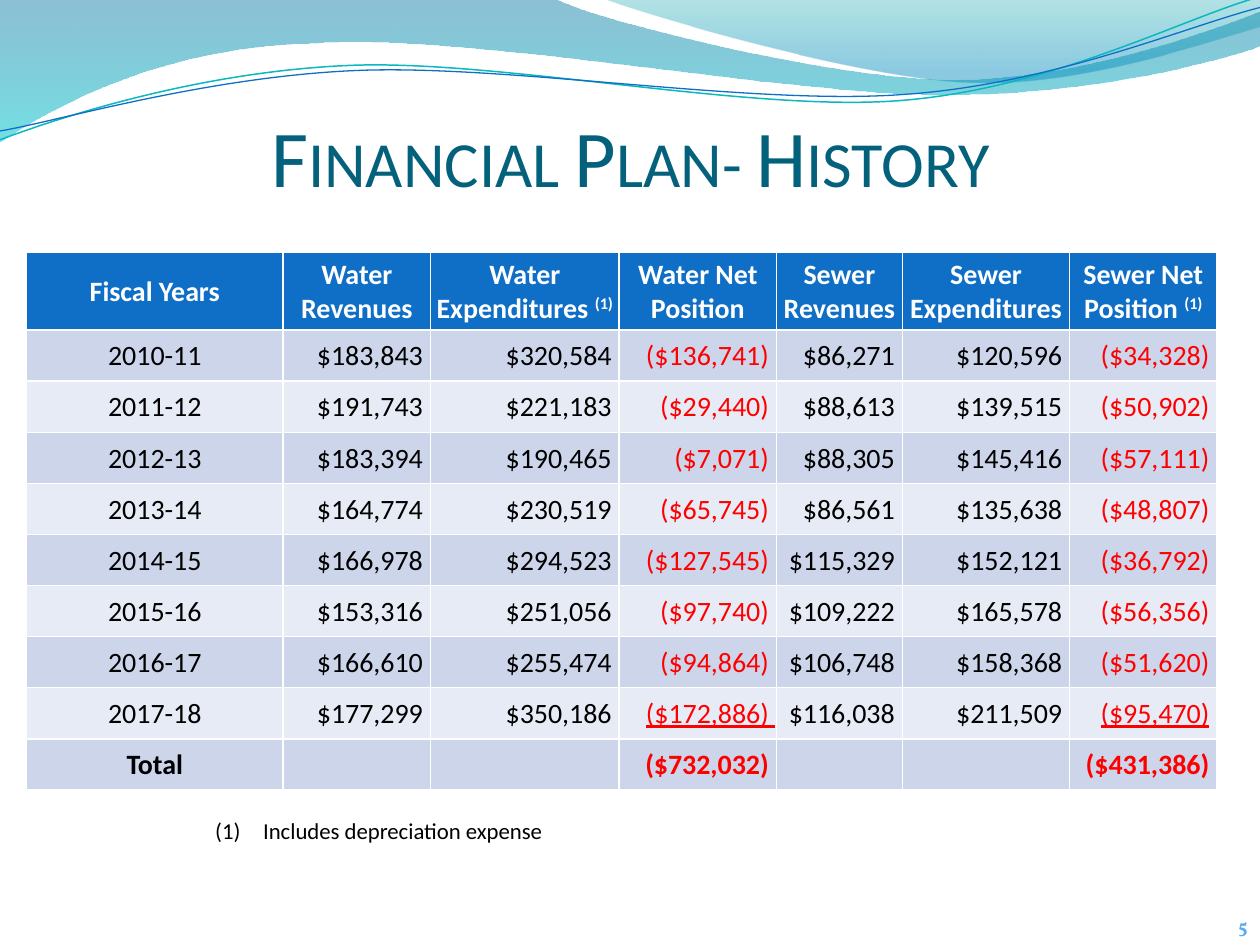
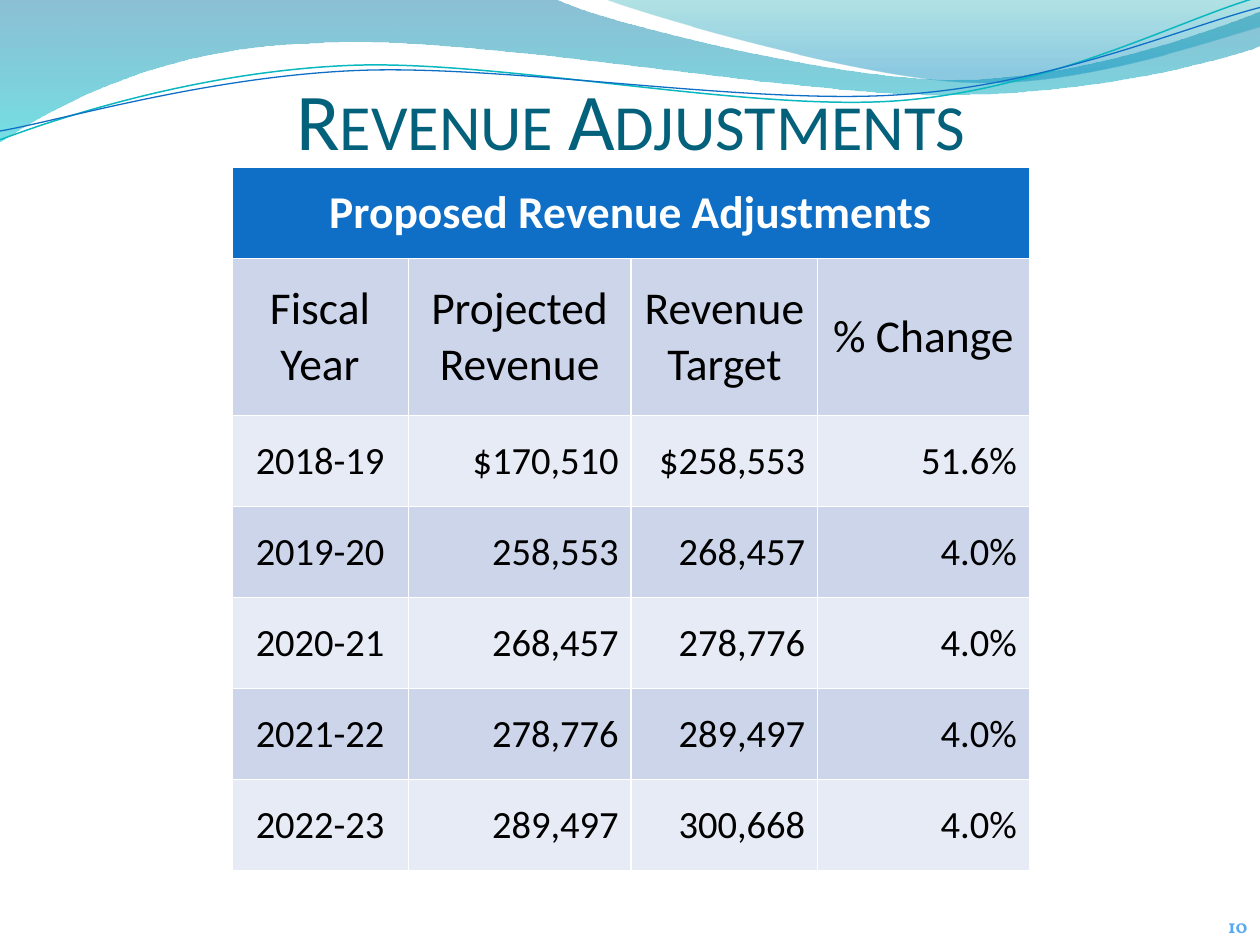
from dataclasses import dataclass
from math import cos, radians, sin

from lxml.etree import SubElement
from pptx import Presentation
from pptx.dml.color import RGBColor
from pptx.enum.text import MSO_ANCHOR, PP_ALIGN
from pptx.oxml.ns import qn
from pptx.util import Inches, Pt


@dataclass(frozen=True)
class Theme:
    font: str = "Calibri"
    number_font: str = "Vollkorn"
    title: str = "04617B"
    number: str = "59AAF2"
    header: str = "0F6FC6"
    bands: tuple = ("CCD5EA", "E7EBF5")
    white: str = "FFFFFF"
    text: str = "000000"
    loss: str = "FF0000"
    title_size: int = 46
    number_size: int = 11
    note_size: int = 13


THEME = Theme()
NOTE_MARK = ("(1)", {"baseline": "30000"})
UNDERLINED = {"underline": True}

HISTORY = {
    "place": (0.21, 2, 9.45, 4.27),
    "columns": [2.04, 1.17, 1.5, 1.25, 1, 1.33, 1.17],
    "rows": [0.62] + [(4.27 - 0.62) / 9] * 9,
    "margins": (0.01, 0.01, 0.01, 0),
    "sizes": [16] * 10,
    "label_rows": 1,
    "bold_rows": (0, 9),
    "cells": [
        ["Fiscal Years", "Water Revenues", [("Water Expenditures ", {}), NOTE_MARK],
         "Water Net Position", "Sewer Revenues", "Sewer Expenditures",
         [("Sewer Net Position ", {}), NOTE_MARK]],
        ["2010-11", "$183,843 ", "$320,584 ", "($136,741) ", "$86,271 ", "$120,596 ", "($34,328) "],
        ["2011-12", "$191,743 ", "$221,183 ", "($29,440) ", "$88,613 ", "$139,515 ", "($50,902) "],
        ["2012-13", "$183,394 ", "$190,465 ", "($7,071) ", "$88,305 ", "$145,416 ", "($57,111) "],
        ["2013-14", "$164,774 ", "$230,519 ", "($65,745) ", "$86,561 ", "$135,638 ", "($48,807) "],
        ["2014-15", "$166,978 ", "$294,523 ", "($127,545) ", "$115,329 ", "$152,121 ", "($36,792) "],
        ["2015-16", "$153,316 ", "$251,056 ", "($97,740) ", "$109,222 ", "$165,578 ", "($56,356) "],
        ["2016-17", "$166,610 ", "$255,474 ", "($94,864) ", "$106,748 ", "$158,368 ", "($51,620) "],
        ["2017-18", "$177,299 ", "$350,186 ", [("($172,886) ", UNDERLINED)],
         "$116,038 ", "$211,509 ", [("($95,470)", UNDERLINED), (" ", {})]],
        ["Total", "", "", "($732,032) ", "", "", "($431,386) "],
    ],
}

ADJUSTMENTS = {
    "place": (1.84, 1.33, 6.33, 5.58),
    "columns": [1.4, 1.77, 1.48, 1.68],
    "rows": [0.72, 1.25] + [(5.58 - 0.72 - 1.25) / 5] * 5,
    "margins": (0.1, 0.05, 0.1, 0.05),
    "sizes": [26] * 2 + [22] * 5,
    "label_rows": 2,
    "bold_rows": (0,),
    "cells": [
        ["Proposed Revenue Adjustments"],
        ["Fiscal Year", "Projected Revenue", "Revenue Target", "% Change"],
        ["2018-19", "$170,510", "$258,553", "51.6%"],
        ["2019-20", "258,553", "268,457", "4.0%"],
        ["2020-21", "268,457", "278,776", "4.0%"],
        ["2021-22", "278,776", "289,497", "4.0%"],
        ["2022-23", "289,497", "300,668", "4.0%"],
    ],
}

PAGES = [
    {"title": "Financial Plan- History", "title_place": (0.01, 0.75, 9.99, 0.92),
     "number": "5", "table": HISTORY, "note": "Includes depreciation expense"},
    {"title": "Revenue Adjustments", "title_place": (0.01, 0.33, 9.99, 1.17),
     "number": "10", "table": ADJUSTMENTS, "note": None},
]
NUMBER_PLACE = (8.42, 7.21, 1.58, 0.29)
NOTE_PLACE = (1.61, 6.43, 3.42, 0.32)
NOTE_INDENT = 0.38

WAVES = [
    {"start": (0, 0), "stops": [(0, "0074A1", 45), (1, "00C6CF", 55)],
     "steps": [(4.4, -0.01), (4.76, 0.17, 6.64, 0.63, 7.58, 0.63),
               (8.53, 0.63, 9.58, 0.26, 10, 0.09), (10.01, 0.36),
               (9.83, 0.44, 8.7, 0.76, 7.46, 0.75), (6.22, 0.75, 3.82, 0.28, 2.57, 0.34),
               (1.29, 0.36, 0.46, 0.83, -0.01, 1.13), (0, 0)]},
    {"start": (4.79, -0.01), "stops": [(0, "00A1A9", 30), (0.8, "008BBF", 45)],
     "steps": [(5.09, 0.11, 6.82, 0.62, 7.69, 0.65), (8.56, 0.69, 9.61, 0.32, 10, 0.21),
               (10, 0), (4.79, -0.01)]},
    {"start": (0, 1.11), "line": ("0AB8BF", 0.85),
     "steps": [(0.48, 0.93, 1.58, 0.57, 2.77, 0.52), (3.95, 0.47, 5.93, 0.89, 7.13, 0.8),
               (8.33, 0.71, 9.38, 0.15, 9.98, -0.02)]},
    {"start": (0, 1.04), "line": ("0F6FC6", 0.75),
     "steps": [(0.47, 0.96, 1.64, 0.61, 2.83, 0.56), (4.03, 0.51, 5.97, 0.84, 7.17, 0.75),
               (8.36, 0.67, 9.41, 0.21, 10, 0.06)]},
]
LINE_TURN = -2.7
LINE_CENTER = (5, 0.58)


def inches(values):
    return [Inches(value) for value in values]


def color(code):
    return RGBColor.from_string(code)


def level(point):
    angle = radians(-LINE_TURN)
    across, down = (value - middle for value, middle in zip(point, LINE_CENTER))
    return (LINE_CENTER[0] + across * cos(angle) - down * sin(angle),
            LINE_CENTER[1] + across * sin(angle) + down * cos(angle))


def bend(shape, steps):
    segments = iter(shape._element.findall(".//" + qn("a:lnTo")))
    for step in steps:
        segment = next(segments)
        if len(step) == 2:
            continue
        curve = segment.makeelement(qn("a:cubicBezTo"))
        segment.addprevious(curve)
        for part in (segment, next(segments), next(segments)):
            curve.append(part[0])
            part.getparent().remove(part)


def add_wave(page, wave):
    points = [wave["start"]]
    for step in wave["steps"]:
        points.extend(zip(step[::2], step[1::2]))
    if "line" in wave:
        points = [level(point) for point in points]
    first, *others = [inches(point) for point in points]
    builder = page.shapes.build_freeform(*first)
    builder.add_line_segments(others, close="stops" in wave)
    shape = builder.convert_to_shape()
    bend(shape, wave["steps"])
    shape.shadow.inherit = False
    if "line" in wave:
        code, width = wave["line"]
        shape.rotation = LINE_TURN
        shape.fill.background()
        shape.line.color.rgb = color(code)
        shape.line.width = Pt(width)
        return
    shape.line.fill.background()
    shape.fill.gradient()
    shape.fill.gradient_angle = 270
    for stop, (position, code, _) in zip(shape.fill.gradient_stops, wave["stops"]):
        stop.position = position
        stop.color.rgb = color(code)
    tints = shape._element.spPr.findall(".//" + qn("a:srgbClr"))
    for tint, (_, _, opacity) in zip(tints, wave["stops"]):
        SubElement(tint, qn("a:alpha"), val=str(opacity * 1000))


def add_span(para, text, formats):
    span = para.add_run()
    span.text = text
    for name, value in formats.items():
        if name == "color":
            span.font.color.rgb = color(value)
        elif name in ("cap", "baseline"):
            span._r.get_or_add_rPr().set(name, value)
        else:
            setattr(span.font, name, value)


def set_margins(target, margins):
    for side, margin in zip(("left", "top", "right", "bottom"), margins):
        setattr(target, "margin_" + side, Inches(margin))


def add_text(page, place, text, formats, alignment=PP_ALIGN.LEFT):
    box = page.shapes.add_textbox(*inches(place))
    box.text_frame.word_wrap = True
    para = box.text_frame.paragraphs[0]
    para.alignment = alignment
    add_span(para, text, formats)
    return box.text_frame


def add_title(page, place, text):
    frame = add_text(page, place, text, {
        "name": THEME.font, "size": Pt(THEME.title_size), "color": THEME.title, "cap": "small",
    }, PP_ALIGN.CENTER)
    frame.vertical_anchor = MSO_ANCHOR.MIDDLE
    set_margins(frame, (0, 0.05, 0, 0))


def add_note(page, text):
    frame = add_text(page, NOTE_PLACE, text, {
        "name": THEME.font, "size": Pt(THEME.note_size), "color": THEME.text,
    })
    properties = frame.paragraphs[0]._p.get_or_add_pPr()
    properties.set("marL", str(Inches(NOTE_INDENT)))
    properties.set("indent", str(-Inches(NOTE_INDENT)))
    SubElement(properties, qn("a:buFont"), typeface=THEME.font)
    SubElement(properties, qn("a:buAutoNum"), type="arabicParenBoth")


def fill_cell(cell, content, row_index, column_index, plan):
    cell.fill.solid()
    cell.fill.fore_color.rgb = color(THEME.bands[(row_index - 1) % 2] if row_index else THEME.header)
    cell.vertical_anchor = MSO_ANCHOR.MIDDLE
    set_margins(cell, plan["margins"])
    spans = [(content, {})] if isinstance(content, str) else content
    is_label = row_index < plan["label_rows"] or column_index == 0
    para = cell.text_frame.paragraphs[0]
    para.alignment = PP_ALIGN.CENTER if is_label else PP_ALIGN.RIGHT
    size = Pt(plan["sizes"][row_index])
    if not content:
        para.font.size = size
        return
    ink = THEME.loss if spans[0][0].startswith("($") else THEME.text
    shared = {"name": THEME.font, "size": size, "bold": row_index in plan["bold_rows"],
              "color": ink if row_index else THEME.white}
    for text, formats in spans:
        add_span(para, text, shared | formats)


def add_grid(page, plan):
    rows, columns = len(plan["rows"]), len(plan["columns"])
    table = page.shapes.add_table(rows, columns, *inches(plan["place"])).table
    scale = plan["place"][2] / sum(plan["columns"])
    for column, width in zip(table.columns, plan["columns"]):
        column.width = Inches(width * scale)
    for row_index, contents in enumerate(plan["cells"]):
        table.rows[row_index].height = Inches(plan["rows"][row_index])
        padded = contents + [""] * (columns - len(contents))
        for column_index, content in enumerate(padded):
            fill_cell(table.cell(row_index, column_index), content, row_index, column_index, plan)
        if len(contents) == 1:
            table.cell(row_index, 0).merge(table.cell(row_index, columns - 1))


def add_page(deck, content):
    page = deck.slides.add_slide(deck.slide_layouts[6])
    for wave in WAVES:
        add_wave(page, wave)
    add_text(page, NUMBER_PLACE, content["number"], {
        "name": THEME.number_font, "size": Pt(THEME.number_size),
        "color": THEME.number, "bold": True,
    }, PP_ALIGN.RIGHT)
    add_title(page, content["title_place"], content["title"])
    add_grid(page, content["table"])
    if content["note"]:
        add_note(page, content["note"])


def main():
    deck = Presentation()
    deck.slide_width, deck.slide_height = inches((10, 7.5))
    for content in PAGES:
        add_page(deck, content)
    deck.save("out.pptx")


if __name__ == "__main__":
    main()
